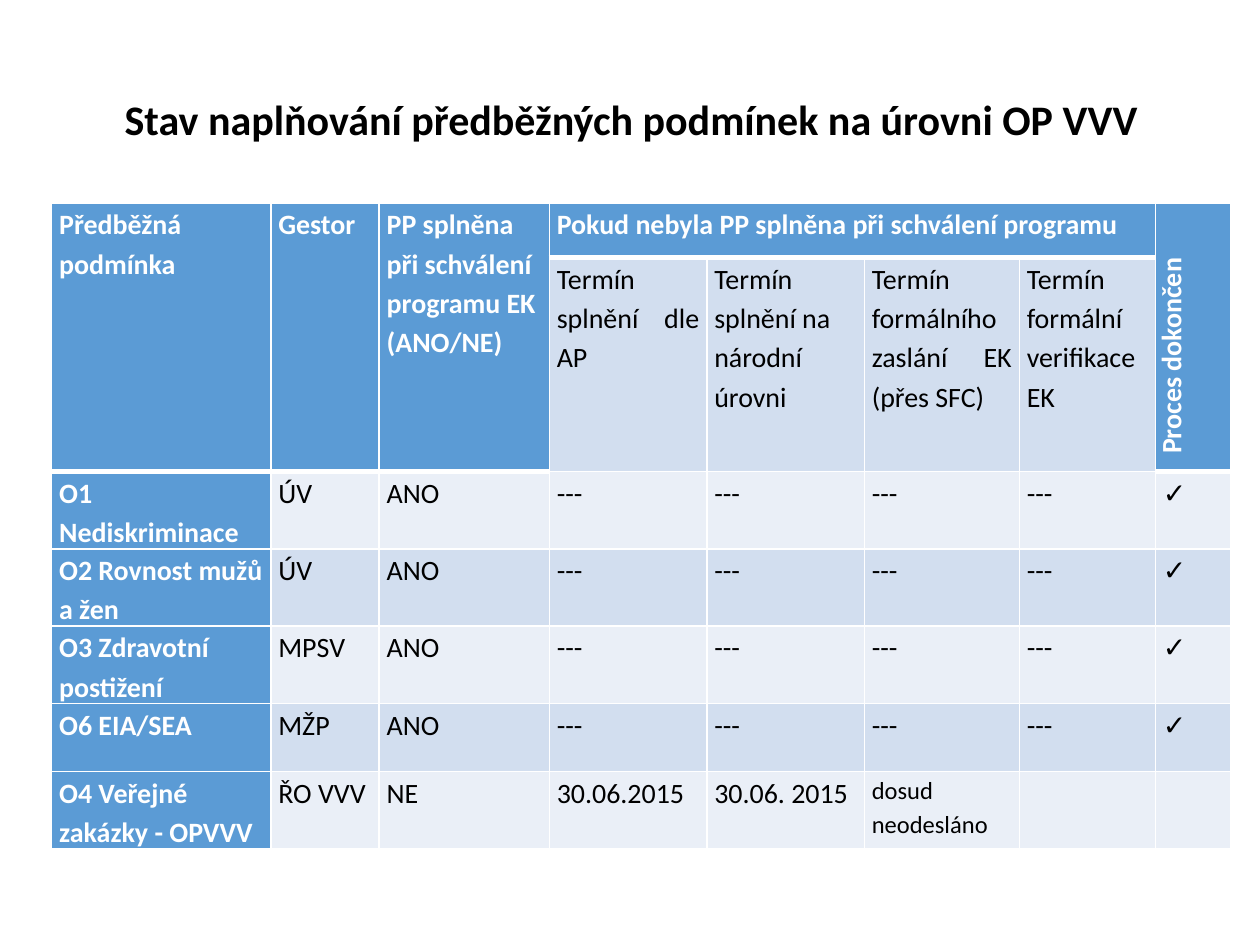
"""Build the slide on the state of preconditions for OP VVV."""
import pptx
import pptx.chart.data
import pptx.dml.color
import pptx.enum.text
import pptx.oxml
import pptx.oxml.ns
import pptx.util

inch = pptx.util.Inches
align = pptx.enum.text.PP_ALIGN
theme = {
    "face": "Calibri", "title": 24, "body": 16, "small": 14,
    "dark": "000000", "light": "FFFFFF", "head": "5B9BD5",
    "bands": ("EAEFF7", "D2DEEF"),
}
wide, high = 10, 7.5
cols = [1.74, 0.86, 1.35, 1.25, 1.25, 1.23, 1.08, 0.6]
rows = [0.43, 1.7, 0.61, 0.61, 0.61, 0.54, 0.61]
dash = ["---"] * 4
data = [
    ["Předběžná podmínka", "Gestor", "PP splněna při schválení programu EK (ANO/NE)",
     "Pokud nebyla PP splněna při schválení programu", "", "", "", "Proces dokončen"],
    ["", "", "", "Termín splnění dle AP", "Termín splnění na národní úrovni",
     "Termín formálního zaslání EK (přes SFC)", "Termín formální verifikace EK", ""],
    ["O1 Nediskriminace", "ÚV", "ANO", *dash, "✓"],
    ["O2 Rovnost mužů a žen", "ÚV", "ANO", *dash, "✓"],
    ["O3 Zdravotní postižení", "MPSV", "ANO", *dash, "✓"],
    ["O6 EIA/SEA", "MŽP", "ANO", *dash, "✓"],
    ["O4 Veřejné zakázky - OPVVV", "ŘO VVV", "NE", "30.06.2015", "30.06. 2015",
     "dosud neodesláno", "", ""],
]
left = {(0, 1), (0, 2), (1, 4)} | {(r, 0) for r in range(2, len(rows))}


def apply(item, form):
    for name, value in form.items():
        setattr(item, name, value)


def style(font, size, tone, bold):
    apply(font, {"name": theme["face"], "size": pptx.util.Pt(size), "bold": bold})
    font.color.rgb = pptx.dml.color.RGBColor.from_string(theme[tone])


deck = pptx.Presentation()
apply(deck, {"slide_width": inch(wide), "slide_height": inch(high)})
slide = deck.slides.add_slide(deck.slide_layouts[6])

title = slide.shapes.add_textbox(
    inch(0.056 * wide), inch(0.092 * high), inch(0.89 * wide), inch(0.32 * high))
title.text_frame.word_wrap = True
para = title.text_frame.paragraphs[0]
para.alignment = align.CENTER
run = para.add_run()
run.text = "Stav naplňování předběžných podmínek na úrovni OP VVV"
style(run.font, theme["title"], "dark", True)

frame = slide.shapes.add_table(
    len(rows), len(cols), inch(0.041 * wide), inch(0.215 * high),
    inch(sum(cols)), inch(sum(rows)))
table = frame.table
apply(table, {"first_row": False, "horz_banding": False})
for col, size in zip(table.columns, cols):
    col.width = inch(size)
for row, size in zip(table.rows, rows):
    row.height = inch(size)
for c in (0, 1, 2, 7):
    table.cell(0, c).merge(table.cell(1, c))
table.cell(0, 3).merge(table.cell(0, 6))

for r, line in enumerate(data):
    for c, text in enumerate(line):
        cell = table.cell(r, c)
        top = r == 0 or r == 1 and c in (0, 1, 2, 7)
        head = top or c == 0
        apply(cell, {"margin_left": inch(0.06), "margin_right": inch(0.06),
                     "margin_top": 0, "margin_bottom": 0})
        props = cell._tc.get_or_add_tcPr()
        for side in "LRTB":
            thick = side == "B" and top or side == "T" and (r == 1 or r == 2 and c in (0, 1, 2, 7))
            edge = pptx.oxml.parse_xml(
                f'<a:ln{side} {pptx.oxml.ns.nsdecls("a")} w="{pptx.util.Pt(3 if thick else 1)}">'
                f'<a:solidFill><a:srgbClr val="{theme["light"]}"/></a:solidFill></a:ln{side}>')
            props.append(edge)
        cell.fill.solid()
        tone = theme["head"] if head else theme["bands"][r % 2]
        cell.fill.fore_color.rgb = pptx.dml.color.RGBColor.from_string(tone)
        para = cell.text_frame.paragraphs[0]
        apply(para, {"line_spacing": 1.15,
                     "alignment": align.LEFT if (r, c) in left else align.JUSTIFY})
        size = theme["small"] if text.startswith("dosud") else theme["body"]
        style(para.font, size, "light" if head else "dark", head)
        if text:
            run = para.add_run()
            run.text = text
            style(run.font, size, "light" if head else "dark", head)

done = table.cell(0, 7)
done.vertical_anchor = pptx.enum.text.MSO_ANCHOR.MIDDLE
done._tc.tcPr.set("vert", "vert270")
para = done.text_frame.paragraphs[0]
apply(para, {"line_spacing": pptx.util.Pt(19.2), "alignment": align.LEFT})
para._p.get_or_add_pPr().set("marL", str(inch(0.08)))

deck.save("out.pptx")
